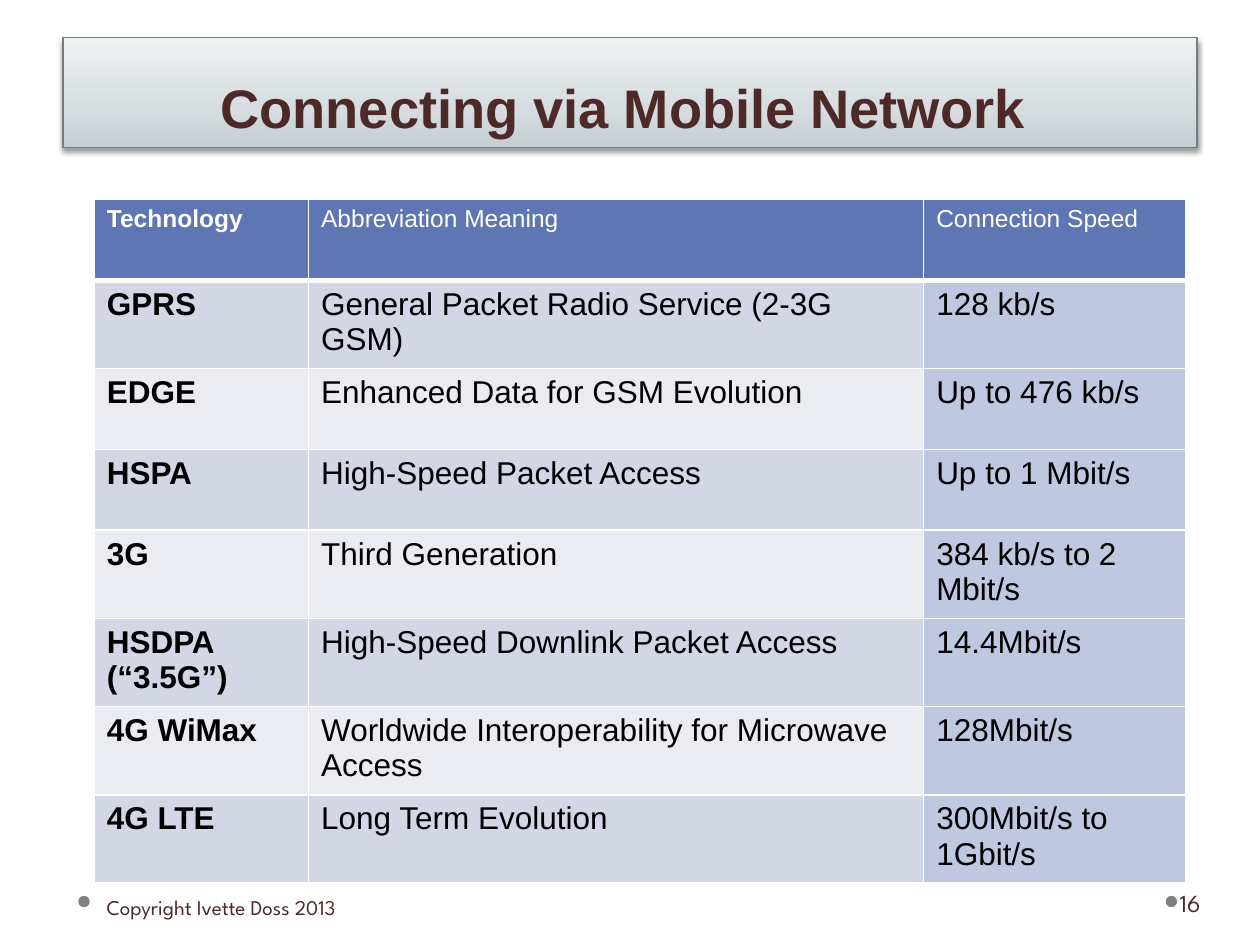
from copy import deepcopy

from pptx import Presentation
from pptx.dml.color import RGBColor
from pptx.enum.shapes import MSO_SHAPE as Shape
from pptx.enum.text import MSO_ANCHOR as Anchor, MSO_AUTO_SIZE as AutoSize, PP_ALIGN as Align
from pptx.oxml import parse_xml
from pptx.oxml.ns import nsdecls, qn
from pptx.util import Cm, Pt

WHITE = RGBColor(0xFF, 0xFF, 0xFF)
BLACK = RGBColor(0, 0, 0)
BROWN = RGBColor(0x4E, 0x29, 0x29)
GREY = RGBColor(0x80, 0x80, 0x80)
SLATE = RGBColor(0x72, 0x7D, 0x82)
HEADER_BLUE = RGBColor(0x60, 0x76, 0xB4)
SPEED_BLUE = RGBColor(0xBF, 0xC8, 0xE1)
BANDS = [RGBColor(0xD2, 0xD6, 0xE5), RGBColor(0xEA, 0xEC, 0xF2)]
TITLE_STOPS = [
    (0, RGBColor(0xC5, 0xCE, 0xD2)),
    (0.35, RGBColor(0xD6, 0xDC, 0xDF)),
    (1, RGBColor(0xEF, 0xF2, 0xF3)),
]

COLUMN_WIDTHS = [4.32, 12.4, 5.28]
ROW_HEIGHTS = [1.63] * 5 + [1.73] * 2 + [1.63]
ROWS = [
    ("Technology", "Abbreviation Meaning", "Connection Speed"),
    ("GPRS", "General Packet Radio Service (2-3G GSM)", "128 kb/s"),
    ("EDGE", "Enhanced Data for GSM Evolution", "Up to 476 kb/s"),
    ("HSPA", "High-Speed Packet Access", "Up to 1 Mbit/s"),
    ("3G", "Third Generation", "384 kb/s to 2 Mbit/s"),
    ("HSDPA\n(“3.5G”)", "High-Speed Downlink Packet Access", "14.4Mbit/s"),
    ("4G WiMax", "Worldwide Interoperability for Microwave Access", "128Mbit/s"),
    ("4G LTE", "Long Term Evolution", "300Mbit/s to 1Gbit/s"),
]


def format_font(font, name, size, color, bold=False):
    """Set the typeface, size, colour and weight of a font."""
    font.name = name
    font.size = Pt(size)
    font.color.rgb = color
    font.bold = bold


def fill_gradient(shape, stops):
    """Fill a shape with stops running from its bottom to its top."""
    shape.fill.gradient()
    shape.fill.gradient_angle = 90
    stop_list = shape._element.spPr.find(qn("a:gradFill")).find(qn("a:gsLst"))
    stop_list.insert(1, deepcopy(stop_list[0]))
    for stop, (position, color) in zip(shape.fill.gradient_stops, stops):
        stop.position = position
        stop.color.rgb = color


def add_shadow(shape):
    """Give a shape a soft shadow below it."""
    shape._element.spPr.append(parse_xml(
        f'<a:effectLst {nsdecls("a")}>'
        f'<a:outerShdw blurRad="{Pt(3.1)}" dist="{Pt(1.6)}" dir="5400000" rotWithShape="0">'
        '<a:srgbClr val="000000"><a:alpha val="38000"/></a:srgbClr>'
        '</a:outerShdw></a:effectLst>'))


def format_title(title):
    """Write the title and style its panel."""
    title.left, title.top, title.width, title.height = Cm(1.27), Cm(0.76), Cm(22.86), Cm(2.21)
    fill_gradient(title, TITLE_STOPS)
    title.line.color.rgb = SLATE
    title.line.width = Pt(0.75)
    add_shadow(title)
    text_frame = title.text_frame
    text_frame.auto_size = AutoSize.NONE
    text_frame.vertical_anchor = Anchor.BOTTOM
    paragraph = text_frame.paragraphs[0]
    paragraph.alignment = Align.CENTER
    paragraph.line_spacing = Pt(58)
    heading, tab = paragraph.add_run(), paragraph.add_run()
    heading.text = "Connecting via Mobile Network "
    tab.text = "\t"
    format_font(heading.font, "Arial", 31, BROWN, True)
    format_font(tab.font, "Vollkorn", 36, BLACK)


def add_borders(cell, bottom_width):
    """Draw white lines on the four sides of a cell."""
    properties = cell._tc.get_or_add_tcPr()
    for side, width in (("L", 1), ("R", 1), ("T", 1), ("B", bottom_width)):
        properties.append(parse_xml(
            f'<a:ln{side} {nsdecls("a")} w="{Pt(width)}"><a:solidFill>'
            f'<a:srgbClr val="{WHITE}"/></a:solidFill></a:ln{side}>'))


def cell_color(row, column):
    """Return the fill for a place in the table."""
    if row == 0:
        return HEADER_BLUE
    return SPEED_BLUE if column == 2 else BANDS[(row - 1) % 2]


def format_cell(cell, row, column):
    """Write and style one table cell."""
    is_header = row == 0
    add_borders(cell, 3 if is_header else 1)
    cell.fill.solid()
    cell.fill.fore_color.rgb = cell_color(row, column)
    cell.text_frame.text = ROWS[row][column]
    size, color = (14, WHITE) if is_header else (18, BLACK)
    for paragraph in cell.text_frame.paragraphs:
        for run in paragraph.runs:
            format_font(run.font, "Arial", size, color, column == 0)


def add_technology_table(slide):
    """Add the table of mobile technologies."""
    table = slide.shapes.add_table(
        len(ROWS), len(COLUMN_WIDTHS), Cm(1.9), Cm(4.02),
        Cm(sum(COLUMN_WIDTHS)), Cm(sum(ROW_HEIGHTS))).table
    for column, width in zip(table.columns, COLUMN_WIDTHS):
        column.width = Cm(width)
    for row, height in zip(table.rows, ROW_HEIGHTS):
        row.height = Cm(height)
    for row in range(len(ROWS)):
        for column in range(len(COLUMN_WIDTHS)):
            format_cell(table.cell(row, column), row, column)


def add_dot(slide, left):
    """Add a grey footer dot."""
    dot = slide.shapes.add_shape(Shape.OVAL, Cm(left), Cm(18.06), Cm(0.23), Cm(0.23))
    dot.shadow.inherit = False
    dot.fill.solid()
    dot.fill.fore_color.rgb = GREY
    dot.line.fill.background()


def add_footer_text(slide, text, left, width, height, size, inset):
    """Add a line of footer text."""
    text_frame = slide.shapes.add_textbox(Cm(left), Cm(17.78), Cm(width), Cm(height)).text_frame
    text_frame.word_wrap = True
    text_frame.vertical_anchor = Anchor.MIDDLE
    text_frame.margin_left = Cm(inset)
    text_frame.margin_right = Cm(0.13)
    text_frame.text = text
    format_font(text_frame.paragraphs[0].runs[0].font, "League Spartan", size, BROWN)


def main():
    """Build and save the slide."""
    presentation = Presentation()
    presentation.slide_width, presentation.slide_height = Cm(25.4), Cm(19.05)
    slide = presentation.slides.add_slide(presentation.slide_layouts[5])
    for left in (23.5, 1.58):
        add_dot(slide, left)
    add_footer_text(slide, "Copyright Ivette Doss 2013", 1.9, 9.1, 1.02, 12, 0.25)
    add_footer_text(slide, "16", 23.7, 1.47, 0.84, 14, 0.08)
    format_title(slide.shapes.title)
    add_technology_table(slide)
    presentation.save("out.pptx")


if __name__ == "__main__":
    main()
